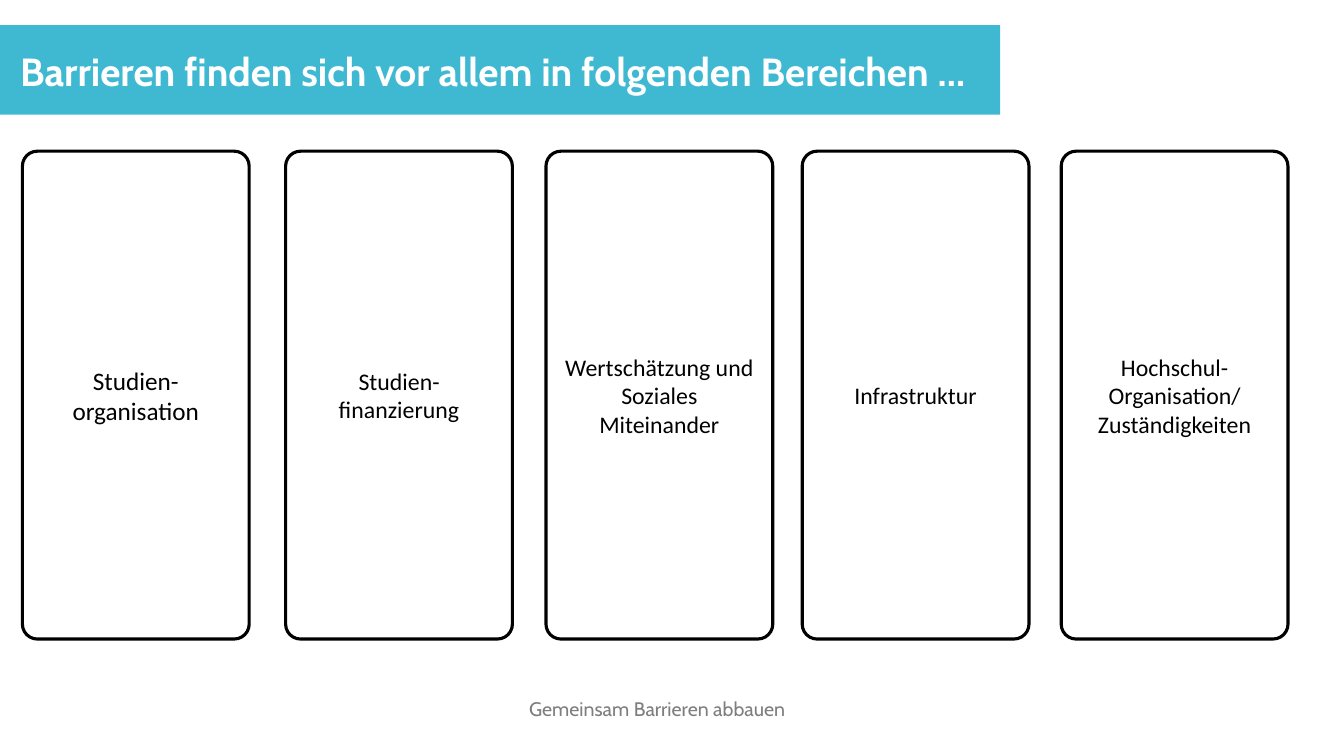
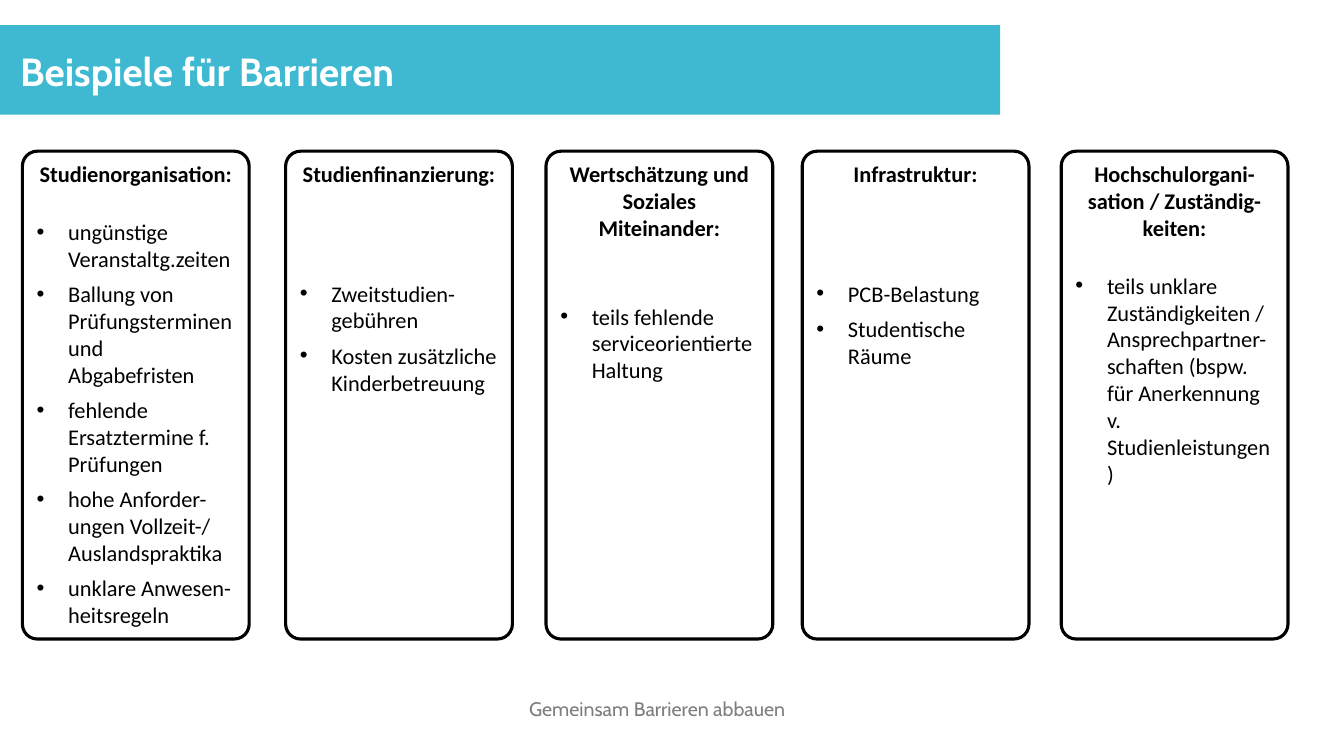
"""Two slides on barriers in studying, each with five columns under a title band."""
import pptx
import pptx.dml.color
import pptx.enum.shapes
import pptx.enum.text
import pptx.oxml
import pptx.oxml.ns
import pptx.util

Pt = pptx.util.Pt
RGBColor = pptx.dml.color.RGBColor
SHAPES = pptx.enum.shapes.MSO_SHAPE
ALIGN = pptx.enum.text.PP_ALIGN
ANCHOR = pptx.enum.text.MSO_ANCHOR

TURQUOISE = RGBColor(0x3F, 0xB9, 0xD2)
GREY = RGBColor(0x7E, 0x7E, 0x7E)
BLACK = RGBColor(0, 0, 0)
WHITE = RGBColor(0xFF, 0xFF, 0xFF)
HEAD_FONT, BODY_FONT = "Cabin", "Calibri"

FOOTER = "Gemeinsam Barrieren abbauen"
AREAS_TITLE = "Barrieren finden sich vor allem in folgenden Bereichen …"
EXAMPLES_TITLE = "Beispiele für Barrieren"

AREAS = [
    (["Studien-organisation"], 18),
    (["Studien-finanzierung"], 17),
    (["Wertschätzung und", "Soziales Miteinander"], 17),
    (["Infrastruktur"], 17),
    (["Hochschul-", "Organisation/ Zuständigkeiten"], 17),
]

EXAMPLES = [
    (["Studienorganisation:"], 22, [
        "ungünstige Veranstaltg.zeiten",
        "Ballung von Prüfungsterminen und Abgabefristen",
        "fehlende Ersatztermine f. Prüfungen",
        "hohe Anforder-ungen Vollzeit-/ Auslandspraktika",
        "unklare Anwesen-heitsregeln",
    ]),
    (["Studienfinanzierung:"], 66, [
        "Zweitstudien-gebühren",
        "Kosten zusätzliche Kinderbetreuung",
    ]),
    (["Wertschätzung und", "Soziales Miteinander:"], 44, [
        "teils fehlende serviceorientierte Haltung",
    ]),
    (["Infrastruktur:"], 66, ["PCB-Belastung", "Studentische Räume"]),
    (["Hochschulorgani- sation / Zuständig-keiten:"], 22, [
        "teils unklare Zuständigkeiten / Ansprechpartner-schaften "
        "(bspw. für Anerkennung v. Studienleistungen)",
    ]),
]

COLUMN_LEFTS = (16, 204, 390, 573, 758)
COLUMN_TOP, COLUMN_WIDTH, COLUMN_HEIGHT = 108, 162, 348.5
BULLET_INDENT = 22.5


def add_text(paragraph, text, size, color=BLACK, font=BODY_FONT, bold=False, align=ALIGN.CENTER):
    """Write one formatted run into a paragraph."""
    paragraph.alignment = align
    run = paragraph.add_run()
    run.text = text
    run.font.name, run.font.size, run.font.bold = font, Pt(size), bold
    run.font.color.rgb = color


def next_paragraph(frame):
    """Return the unused first paragraph, or a new one."""
    first = frame.paragraphs[0]
    return frame.add_paragraph() if first.runs else first


def add_bullet(paragraph):
    """Give a paragraph a hanging round bullet."""
    properties = paragraph._p.get_or_add_pPr()
    properties.set("marL", str(Pt(BULLET_INDENT)))
    properties.set("indent", str(-Pt(BULLET_INDENT)))
    for tag, name, value in (("buFont", "typeface", "Arial"), ("buChar", "char", "•")):
        bullet = pptx.oxml.parse_xml(f'<a:{tag} {pptx.oxml.ns.nsdecls("a")} {name}="{value}"/>')
        properties.append(bullet)
    paragraph.space_after = Pt(6)


def add_slide(deck, heading):
    """Add a slide with title band, title and footer."""
    slide = deck.slides.add_slide(deck.slide_layouts[5])
    title = slide.shapes.title
    title.left, title.top, title.width, title.height = Pt(0), Pt(30), Pt(723.5), Pt(41)
    frame = title.text_frame
    frame.margin_left, frame.margin_right = Pt(14.4), Pt(7.2)
    frame.margin_top = frame.margin_bottom = Pt(3.6)
    frame.vertical_anchor = ANCHOR.TOP
    frame.auto_size = pptx.enum.text.MSO_AUTO_SIZE.NONE
    add_text(frame.paragraphs[0], heading, 28, WHITE, HEAD_FONT, True, ALIGN.LEFT)

    band = slide.shapes.add_shape(SHAPES.RECTANGLE, Pt(0), Pt(18), Pt(714.5), Pt(64))
    band.shadow.inherit = False
    band.fill.solid()
    band.fill.fore_color.rgb = TURQUOISE
    band.line.fill.background()
    title.element.addprevious(band.element)

    footer = slide.shapes.add_textbox(Pt(306), Pt(505.5), Pt(327), Pt(11)).text_frame
    footer.word_wrap = True
    footer.margin_left = footer.margin_right = footer.margin_top = footer.margin_bottom = 0
    footer.paragraphs[0].line_spacing = Pt(9.1)
    add_text(footer.paragraphs[0], FOOTER, 14, GREY, HEAD_FONT)
    return slide


def add_column(slide, left, anchor):
    """Add an outlined rounded column and return its text frame."""
    column = slide.shapes.add_shape(
        SHAPES.ROUNDED_RECTANGLE, Pt(left), Pt(COLUMN_TOP), Pt(COLUMN_WIDTH), Pt(COLUMN_HEIGHT))
    column.adjustments[0] = 0.066
    column.shadow.inherit = False
    column.fill.background()
    column.line.color.rgb = BLACK
    column.line.width = Pt(2.25)
    column.text_frame.word_wrap = True
    column.text_frame.vertical_anchor = anchor
    return column.text_frame


def main():
    deck = pptx.Presentation()
    deck.slide_width, deck.slide_height = Pt(960), Pt(540)

    areas_slide = add_slide(deck, AREAS_TITLE)
    for left, (lines, size) in zip(COLUMN_LEFTS, AREAS):
        frame = add_column(areas_slide, left, ANCHOR.MIDDLE)
        for line in lines:
            add_text(next_paragraph(frame), line, size)

    examples_slide = add_slide(deck, EXAMPLES_TITLE)
    for left, (lines, gap, examples) in zip(COLUMN_LEFTS, EXAMPLES):
        frame = add_column(examples_slide, left, ANCHOR.TOP)
        for line in lines:
            add_text(next_paragraph(frame), line, 16, bold=True)
        frame.paragraphs[-1].space_after = Pt(gap)
        for example in examples:
            paragraph = next_paragraph(frame)
            add_bullet(paragraph)
            add_text(paragraph, example, 16, align=ALIGN.LEFT)

    deck.save("out.pptx")


if __name__ == "__main__":
    main()
